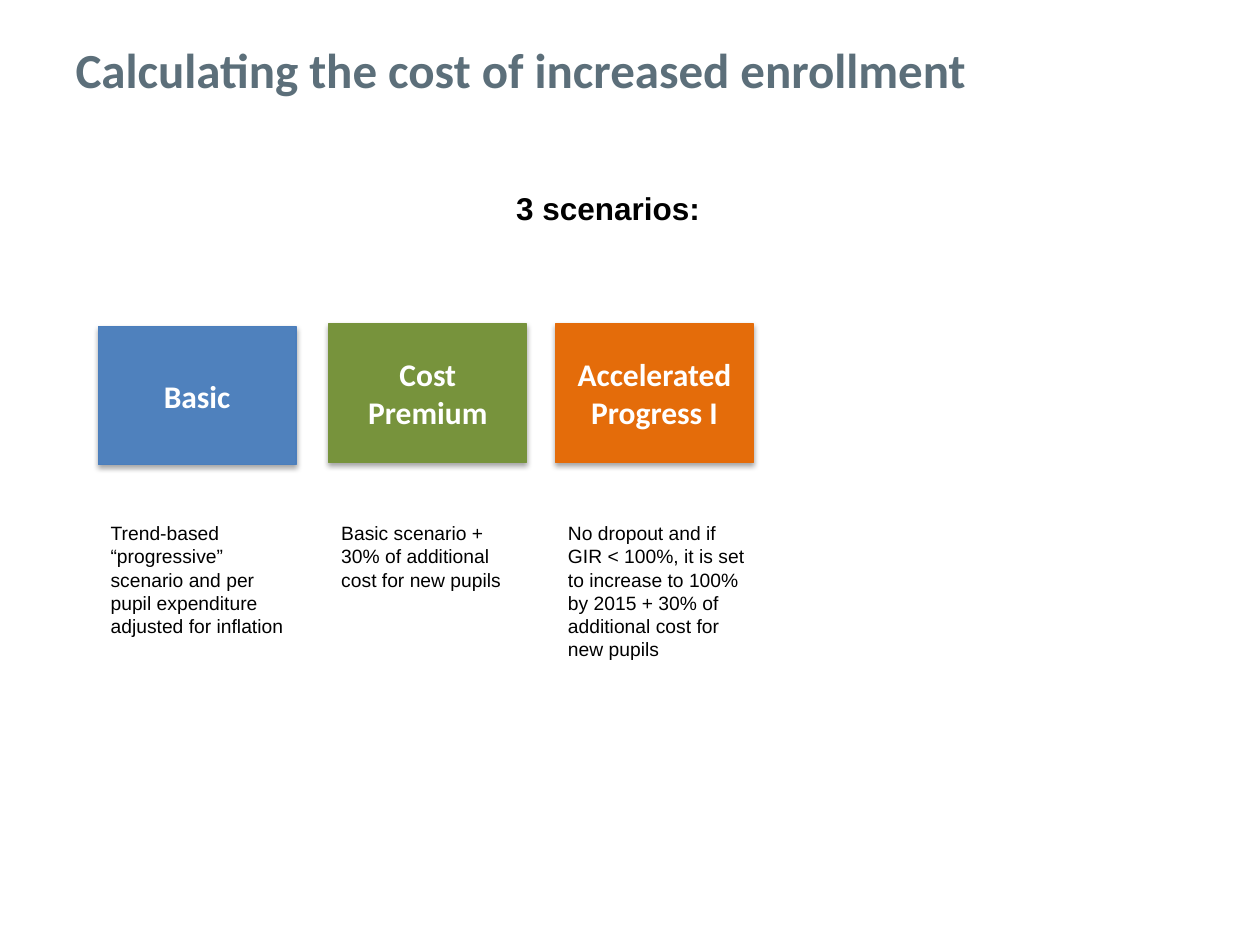
from pptx import Presentation
from pptx.dml.color import RGBColor
from pptx.enum.shapes import MSO_SHAPE as Shape
from pptx.enum.text import MSO_ANCHOR as Anchor, PP_ALIGN as Align
from pptx.util import Cm, Pt

SLATE = RGBColor(0x5C, 0x6F, 0x7A)
BLACK = RGBColor(0x00, 0x00, 0x00)
WHITE = RGBColor(0xFF, 0xFF, 0xFF)
BLUE = RGBColor(0x4F, 0x81, 0xBD)
EDGE = RGBColor(0x4B, 0x7E, 0xBC)
GREEN = RGBColor(0x77, 0x93, 0x3C)
ORANGE = RGBColor(0xE4, 0x6C, 0x0A)

WIDTH, HEIGHT = 3.99, 2.79
NOTE_TOP = 10.39

# name, left, top, fill, line, note, note width, note height
CASES = [
    ("Basic", 1.98, 6.58, BLUE, EDGE,
     "Trend-based “progressive” scenario and per pupil expenditure "
     "adjusted for inflation", WIDTH, 2.62),
    ("Cost Premium", 6.63, 6.53, GREEN, GREEN,
     "Basic scenario + 30% of additional cost for new pupils", WIDTH, 1.68),
    ("Accelerated Progress I", 11.2, 6.53, ORANGE, ORANGE,
     "No dropout and if GIR < 100%, it is set to increase to 100% by 2015 "
     "+ 30% of additional cost for new pupils", 4.27, 3.56),
]


def write(shape, text, face, size, color, bold=False, align=Align.LEFT):
    frame = shape.text_frame
    frame.word_wrap = True
    frame.text = text
    para = frame.paragraphs[0]
    para.alignment = align
    font = para.font
    font.name, font.size, font.bold = face, Pt(size), bold
    font.color.rgb = color


def add_title(slide, text):
    title = slide.shapes.title
    title.left, title.top = Cm(1.27), Cm(0)
    title.width, title.height = Cm(24.13), Cm(2.77)
    write(title, text, "Calibri", 28, SLATE, bold=True)
    title.text_frame.vertical_anchor = Anchor.MIDDLE


def add_text(slide, box, text, size, **style):
    shape = slide.shapes.add_textbox(*map(Cm, box))
    write(shape, text, "Arial", size, BLACK, **style)


def add_tile(slide, left, top, name, fill, line):
    """Add a coloured box that keeps the soft shadow of the theme."""
    tile = slide.shapes.add_shape(
        Shape.RECTANGLE, Cm(left), Cm(top), Cm(WIDTH), Cm(HEIGHT))
    tile.fill.solid()
    tile.fill.fore_color.rgb = fill
    tile.line.color.rgb = line
    tile.line.width = Pt(0.75)
    write(tile, name, "Calibri", 18, WHITE, bold=True, align=Align.CENTER)
    tile.text_frame.vertical_anchor = Anchor.MIDDLE


def main():
    deck = Presentation()
    deck.slide_width, deck.slide_height = Cm(25.4), Cm(19.05)
    slide = deck.slides.add_slide(deck.slide_layouts.get_by_name("Title Only"))
    add_title(slide, "Calculating the cost of increased enrollment")
    add_text(slide, (3.99, 3.68, 16.54, 1.02), "3 scenarios:", 18,
             bold=True, align=Align.CENTER)
    for name, left, top, fill, line, note, width, height in CASES:
        add_tile(slide, left, top, name, fill, line)
        add_text(slide, (left, NOTE_TOP, width, height), note, 11)
    deck.save("out.pptx")


if __name__ == "__main__":
    main()
